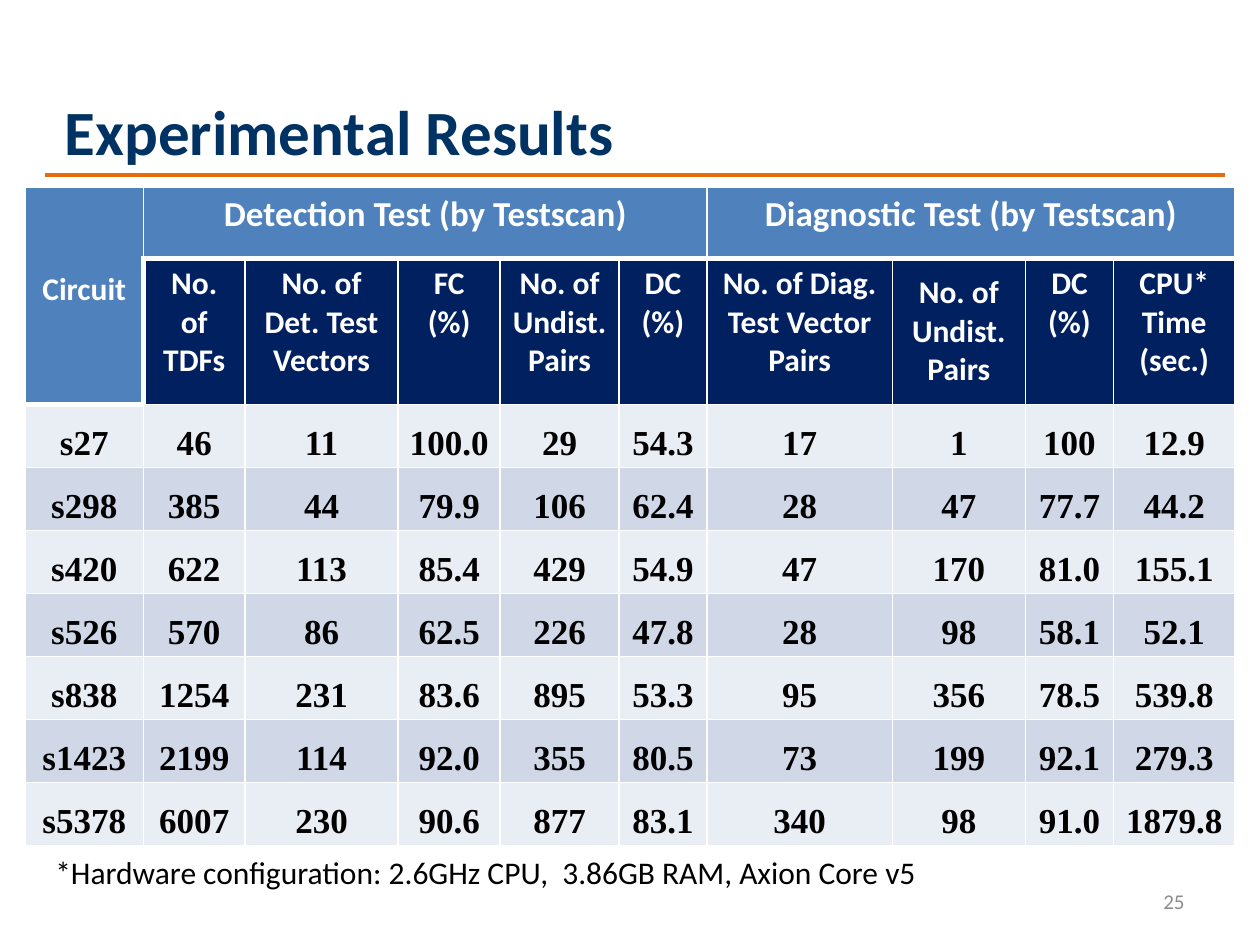
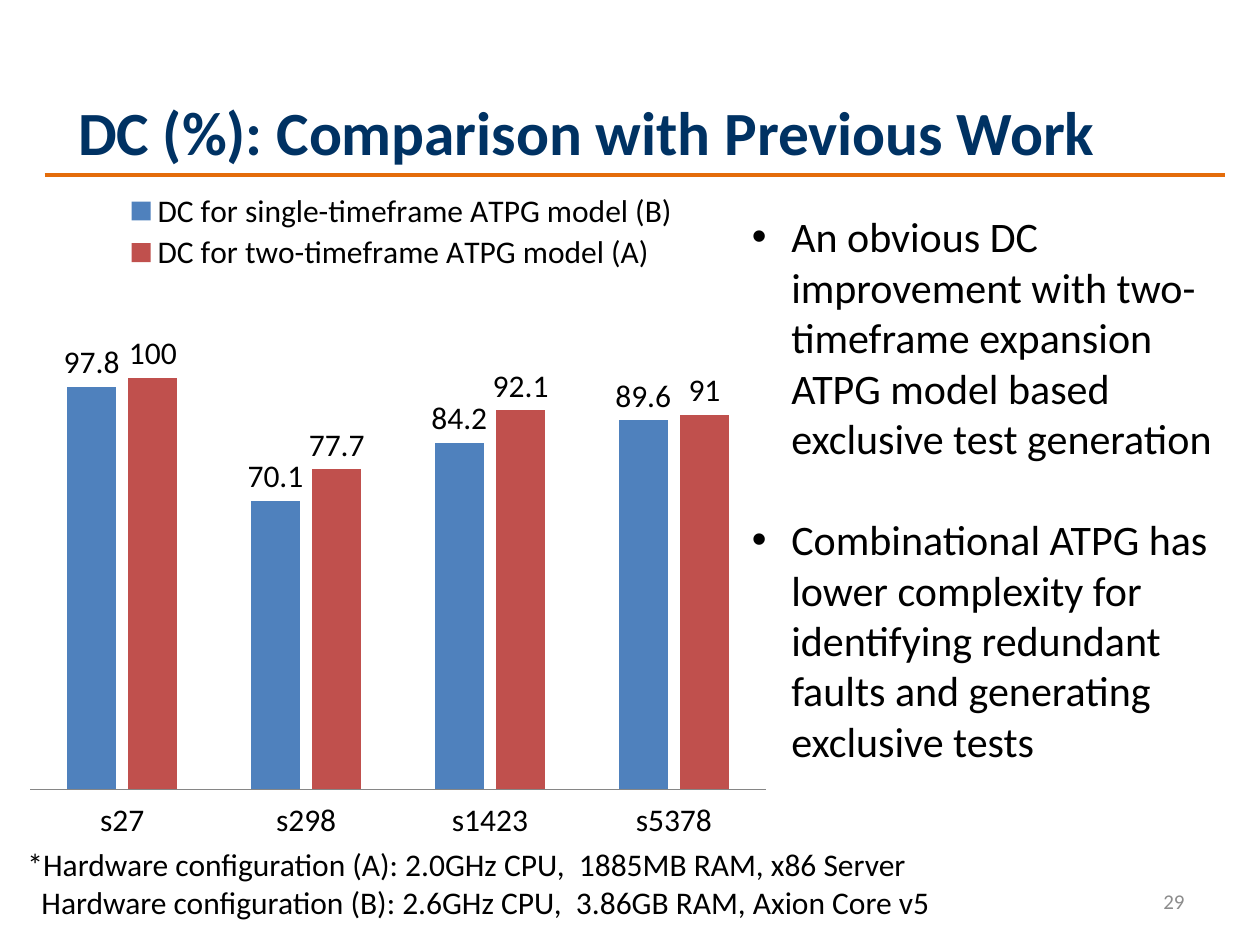
"""Build two slides on diagnostic test results: a results table and a coverage chart."""
from lxml.etree import SubElement
from pptx import Presentation
from pptx.chart.data import CategoryChartData
from pptx.dml.color import RGBColor
from pptx.enum.chart import XL_CHART_TYPE, XL_LABEL_POSITION, XL_LEGEND_POSITION, XL_TICK_LABEL_POSITION, XL_TICK_MARK
from pptx.enum.shapes import MSO_CONNECTOR
from pptx.enum.text import MSO_ANCHOR, PP_ALIGN
from pptx.oxml import parse_xml
from pptx.oxml.ns import nsdecls, qn
from pptx.util import Pt

COLORS = {
    "title": "003263", "rule": "E46C0A", "number": "8C8C8C", "text": "000000",
    "white": "FFFFFF", "group": "4F81BD", "heading": "002060",
    "light": "E9EDF4", "dark": "D0D8E8", "single": "4F81BD", "double": "C0504D",
    "axis": "868686",
}


def write_text(frame, text, size=18, font="Calibri", color="text", bold=False, align=PP_ALIGN.LEFT,
               anchor=MSO_ANCHOR.TOP, spacing=None, gap=0, bullet_indent=0):
    """Fill a text frame, one paragraph per line of text."""
    frame.word_wrap = True
    frame.vertical_anchor = anchor
    for index, line in enumerate(text.split("\n")):
        para = frame.add_paragraph() if index else frame.paragraphs[0]
        para.alignment = align
        if spacing:
            para.line_spacing = spacing
        if gap and index:
            para.space_before = Pt(gap)
        if bullet_indent:
            properties = para._p.get_or_add_pPr()
            properties.set("marL", str(Pt(bullet_indent)))
            properties.set("indent", str(-Pt(bullet_indent)))
            SubElement(properties, qn("a:buFont"), typeface="Arial")
            SubElement(properties, qn("a:buChar"), char="•")
        span = para.add_run()
        span.text = line
        span.font.size = Pt(size)
        span.font.name = font
        span.font.bold = bold
        span.font.color.rgb = RGBColor.from_string(COLORS[color])


def add_text(page, area, text, **text_format):
    """Add a text box at (left, top, width, height) in points."""
    box = page.shapes.add_textbox(*map(Pt, area))
    write_text(box.text_frame, text, **text_format)
    return box


deck = Presentation()
deck.slide_width, deck.slide_height = Pt(720), Pt(540)

pages = []
for title, number, left, width, size in [
    ("Experimental Results", "25", 30, 648, 36),
    ("DC (%): Comparison with Previous Work", "29", 37.5, 600, 35.1),
]:
    page = deck.slides.add_slide(deck.slide_layouts[6])
    pages.append(page)
    add_text(page, (516, 500.5, 168, 28.75), number, size=12, color="number",
             align=PP_ALIGN.RIGHT, anchor=MSO_ANCHOR.MIDDLE)
    rule = page.shapes.add_connector(MSO_CONNECTOR.STRAIGHT, Pt(25.5), Pt(100), Pt(700), Pt(100))
    rule.line.color.rgb = RGBColor.from_string(COLORS["rule"])
    rule.line.width = Pt(2.25)
    SubElement(rule._element.spPr, qn("a:effectLst"))
    add_text(page, (left, 39.75, width, 59.75), title, size=size, color="title", bold=True,
             anchor=MSO_ANCHOR.BOTTOM)

results_page, comparison_page = pages

headings = [
    "", "No. of\nTDFs", "No. of\nDet. Test\nVectors", "FC\n(%)", "No. of\nUndist.\nPairs", "DC\n(%)",
    "No. of Diag. Test Vector Pairs", "No. of\nUndist.\nPairs", "DC\n(%)", "CPU*\nTime\n(sec.)",
]
results = [
    ["s27", "46", "11", "100.0", "29", "54.3", "17", "1", "100", "12.9"],
    ["s298", "385", "44", "79.9", "106", "62.4", "28", "47", "77.7", "44.2"],
    ["s420", "622", "113", "85.4", "429", "54.9", "47", "170", "81.0", "155.1"],
    ["s526", "570", "86", "62.5", "226", "47.8", "28", "98", "58.1", "52.1"],
    ["s838", "1254", "231", "83.6", "895", "53.3", "95", "356", "78.5", "539.8"],
    ["s1423", "2199", "114", "92.0", "355", "80.5", "73", "199", "92.1", "279.3"],
    ["s5378", "6007", "230", "90.6", "877", "83.1", "340", "98", "91.0", "1879.8"],
]
column_widths = [67.8, 57.9, 87.6, 58.3, 67.9, 50.3, 105.9, 76.1, 50.4, 69.3]
row_heights = [40.8, 83.5] + [33.9] * len(results)
undistinguished_column = 7

table = results_page.shapes.add_table(
    len(row_heights), len(column_widths), Pt(14.3), Pt(106.8),
    Pt(sum(column_widths)), Pt(sum(row_heights))).table
table.first_row = table.horz_banding = False
for column, width in zip(table.columns, column_widths):
    column.width = Pt(width)
for row, height in zip(table.rows, row_heights):
    row.height = Pt(height)

for first, last, label, size in [
    ((0, 0), (1, 0), "Circuit", 18),
    ((0, 1), (0, 5), "Detection Test (by Testscan)", 20),
    ((0, 6), (0, 9), "Diagnostic Test (by Testscan)", 20),
]:
    table.cell(*first).merge(table.cell(*last))
    write_text(table.cell(*first).text_frame, label, size=size, color="white", bold=True,
               align=PP_ALIGN.CENTER)
table.cell(0, 0).margin_top = Pt(47.5)

for column, heading in enumerate(headings[1:], 1):
    cell = table.cell(1, column)
    write_text(cell.text_frame, heading, color="white", bold=True, align=PP_ALIGN.CENTER)
    if column == undistinguished_column:
        cell.vertical_anchor = MSO_ANCHOR.MIDDLE
        cell.margin_top = cell.margin_bottom = 0

for row, values in enumerate(results, 2):
    for column, value in enumerate(values):
        cell = table.cell(row, column)
        cell.margin_left = cell.margin_right = Pt(5)
        cell.margin_top = cell.margin_bottom = 0
        write_text(cell.text_frame, value, size=20, font="Times New Roman", bold=True,
                   align=PP_ALIGN.CENTER, spacing=1.5)

for row in range(len(row_heights)):
    for column in range(len(column_widths)):
        cell = table.cell(row, column)
        if row == 0 or (row == 1 and column == 0):
            fill = "group"
        elif row == 1:
            fill = "heading"
        else:
            fill = "dark" if row % 2 else "light"
        cell.fill.solid()
        cell.fill.fore_color.rgb = RGBColor.from_string(COLORS[fill])
        thick_sides = {
            "L": row == 1 and column == 1,
            "R": False,
            "T": (row == 1 and column > 0) or (row == 2 and column == 0),
            "B": row == 0 or (row == 1 and column == 0),
        }
        for index, (side, thick) in enumerate(thick_sides.items()):
            border = parse_xml(
                f'<a:ln{side} {nsdecls("a")} w="{Pt(3 if thick else 1)}"><a:solidFill>'
                f'<a:srgbClr val="{COLORS["white"]}"/></a:solidFill></a:ln{side}>')
            cell._tc.get_or_add_tcPr().insert(index, border)

add_text(results_page, (24.5, 484, 672, 30),
         "*Hardware configuration: 2.6GHz CPU,  3.86GB RAM, Axion Core v5")

coverage = CategoryChartData()
coverage.categories = ["s27", "s298", "s1423", "s5378"]
coverage.add_series("DC for single-timeframe ATPG model (B)", [97.8, 70.1, 84.2, 89.6])
coverage.add_series("DC for two-timeframe ATPG model (A)", [100, 77.7, 92.1, 91])
chart = comparison_page.shapes.add_chart(
    XL_CHART_TYPE.COLUMN_CLUSTERED, Pt(8.6), Pt(100), Pt(437.8), Pt(381.6), coverage).chart
chart.has_title = False
chart.font.name = "Calibri"
chart.font.size = Pt(18)
chart.font.color.rgb = RGBColor.from_string(COLORS["text"])
chart.has_legend = True
chart.legend.position = XL_LEGEND_POSITION.TOP
chart.legend.include_in_layout = False

chart.value_axis.visible = False
chart.value_axis.has_major_gridlines = False
chart.value_axis.minimum_scale = 0
chart.value_axis.maximum_scale = 120
chart.category_axis.major_tick_mark = XL_TICK_MARK.NONE
chart.category_axis.tick_label_position = XL_TICK_LABEL_POSITION.LOW
chart.category_axis.format.line.color.rgb = RGBColor.from_string(COLORS["axis"])

plot = chart.plots[0]
plot.gap_width, plot.overlap, plot.vary_by_categories = 150, -25, False
for series, color in zip(plot.series, ["single", "double"]):
    series.format.fill.solid()
    series.format.fill.fore_color.rgb = RGBColor.from_string(COLORS[color])
    series.data_labels.show_value = True
    series.data_labels.position = XL_LABEL_POSITION.OUTSIDE_END

plot_area = chart._chartSpace.chart.plotArea
for old_layout in plot_area.findall(qn("c:layout")):
    plot_area.remove(old_layout)
legend = chart.legend._element
for old_layout in legend.findall(qn("c:layout")):
    legend.remove(old_layout)
for parent, index, target, place in [
    (plot_area, 0, '<c:layoutTarget val="inner"/>', (0.02, 0.18, 0.96, 0.74)),
    (legend, 1, "", (0.14, 0.02, 0.73, 0.13)),
]:
    sizes = "".join(f'<c:{key} val="{value}"/>' for key, value in zip("xywh", place))
    parent.insert(index, parse_xml(
        f'<c:layout {nsdecls("c")}><c:manualLayout>{target}<c:xMode val="edge"/>'
        f'<c:yMode val="edge"/>{sizes}</c:manualLayout></c:layout>'))

add_text(comparison_page, (422.6, 117, 294, 356),
         "An obvious DC improvement with two-timeframe expansion ATPG model based exclusive test generation\n"
         "Combinational ATPG has lower complexity for identifying redundant faults and generating exclusive tests",
         size=24, gap=29, bullet_indent=22.5)

hardware_note = add_text(
    comparison_page, (8.6, 479.5, 672, 51),
    "*Hardware configuration (A): 2.0GHz CPU,  1885MB RAM, x86 Server\n"
    "Hardware configuration (B): 2.6GHz CPU,  3.86GB RAM, Axion Core v5")
hardware_note.text_frame.paragraphs[1]._p.get_or_add_pPr().set("marL", str(Pt(8)))

deck.save("out.pptx")
